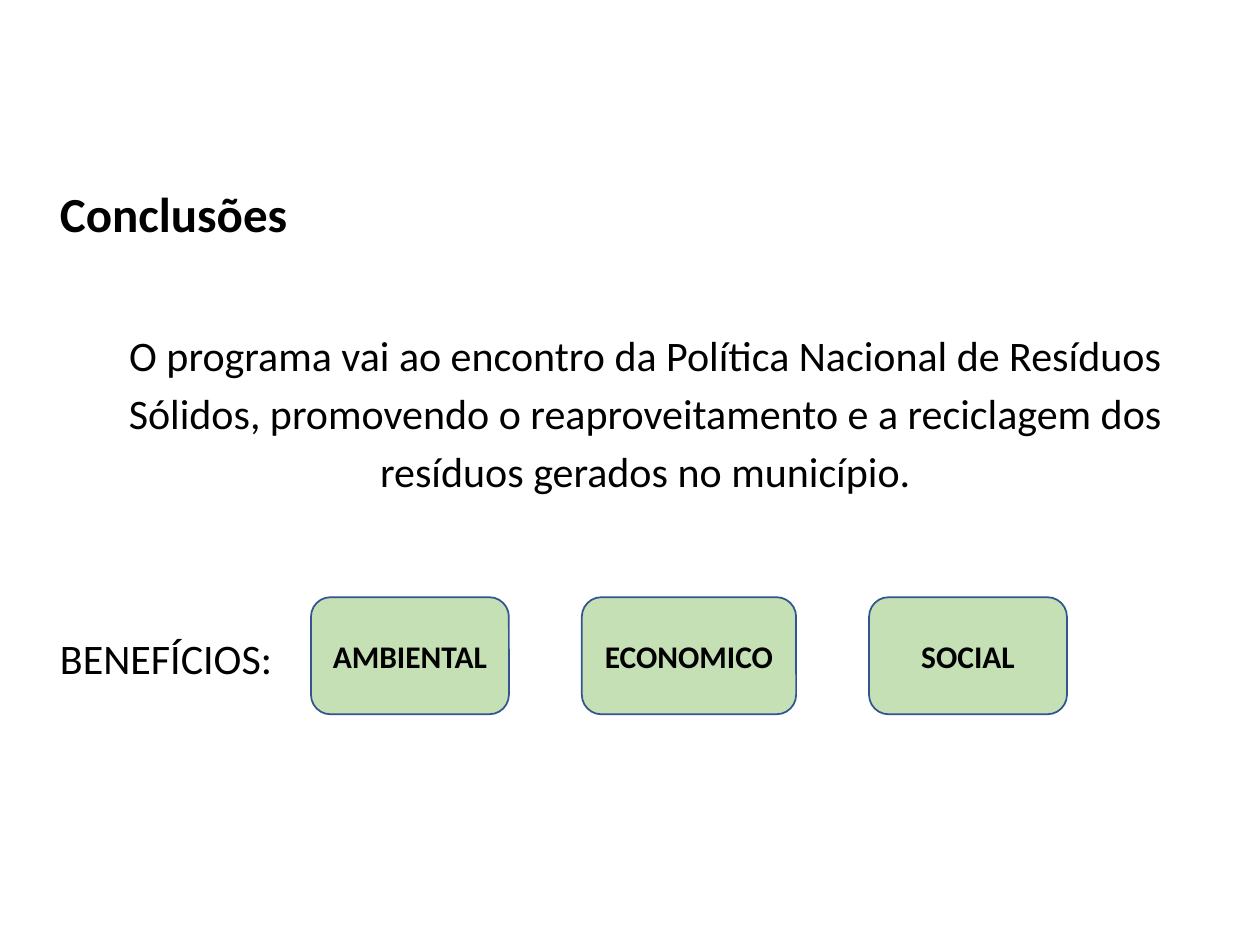
from pptx import Presentation
from pptx.dml.color import RGBColor
from pptx.enum.shapes import MSO_SHAPE
from pptx.enum.text import MSO_ANCHOR, PP_ALIGN
from pptx.util import Cm, Pt

FONT = "Calibri"
BLACK = "000000"
CARD_FILL = "C5E0B4"
CARD_LINE = "325491"

# text, size, bold, alignment, line spacing, space before, space after
CONCLUSIONS = [
    ("Conclusões", 28, True, PP_ALIGN.LEFT, 0.9, 0, 0),
    ("O programa vai ao encontro da Política Nacional de Resíduos Sólidos, "
     "promovendo o reaproveitamento e a reciclagem dos resíduos gerados no "
     "município.", 24, False, PP_ALIGN.CENTER, 1.15, 45.5, 10),
    ("BENEFÍCIOS:", 24, False, PP_ALIGN.JUSTIFY, 1.15, 63.5, 10),
]
# label, width in cm
BENEFITS = [("AMBIENTAL", 3.99), ("ECONOMICO", 4.32), ("SOCIAL", 3.99)]


def color(hex_value):
    return RGBColor.from_string(hex_value)


def style_text(para, size, bold, align):
    para.alignment = align
    for run in para.runs:
        run.font.name = FONT
        run.font.size = Pt(size)
        run.font.bold = bold
        run.font.color.rgb = color(BLACK)


def add_conclusions(page, left, top, width, height):
    box = page.shapes.add_textbox(Cm(left), Cm(top), Cm(width), Cm(height))
    frame = box.text_frame
    frame.word_wrap = True
    frame.text = "\n".join(entry[0] for entry in CONCLUSIONS)
    for para, entry in zip(frame.paragraphs, CONCLUSIONS):
        _, size, bold, align, spacing, before, after = entry
        style_text(para, size, bold, align)
        para.line_spacing = spacing
        para.space_before = Pt(before)
        para.space_after = Pt(after)


def add_benefits(page, left, top, height, gap):
    """Row of rounded cards, each of its own width, with equal gaps."""
    for label, width in BENEFITS:
        card = page.shapes.add_shape(MSO_SHAPE.ROUNDED_RECTANGLE, Cm(left),
                                     Cm(top), Cm(width), Cm(height))
        card.shadow.inherit = False
        card.fill.solid()
        card.fill.fore_color.rgb = color(CARD_FILL)
        card.line.color.rgb = color(CARD_LINE)
        card.line.width = Pt(1)
        frame = card.text_frame
        frame.word_wrap = True
        frame.vertical_anchor = MSO_ANCHOR.MIDDLE
        frame.text = label
        style_text(frame.paragraphs[0], 18, True, PP_ALIGN.CENTER)
        left += width + gap


def main():
    deck = Presentation()
    deck.slide_width = Cm(25.4)
    deck.slide_height = Cm(19.05)
    page = deck.slides.add_slide(deck.slide_layouts[6])
    add_conclusions(page, left=0.96, top=3.7, width=24.1, height=13.21)
    add_benefits(page, left=6.27, top=12.04, height=2.36, gap=1.47)
    deck.save("out.pptx")


if __name__ == "__main__":
    main()
